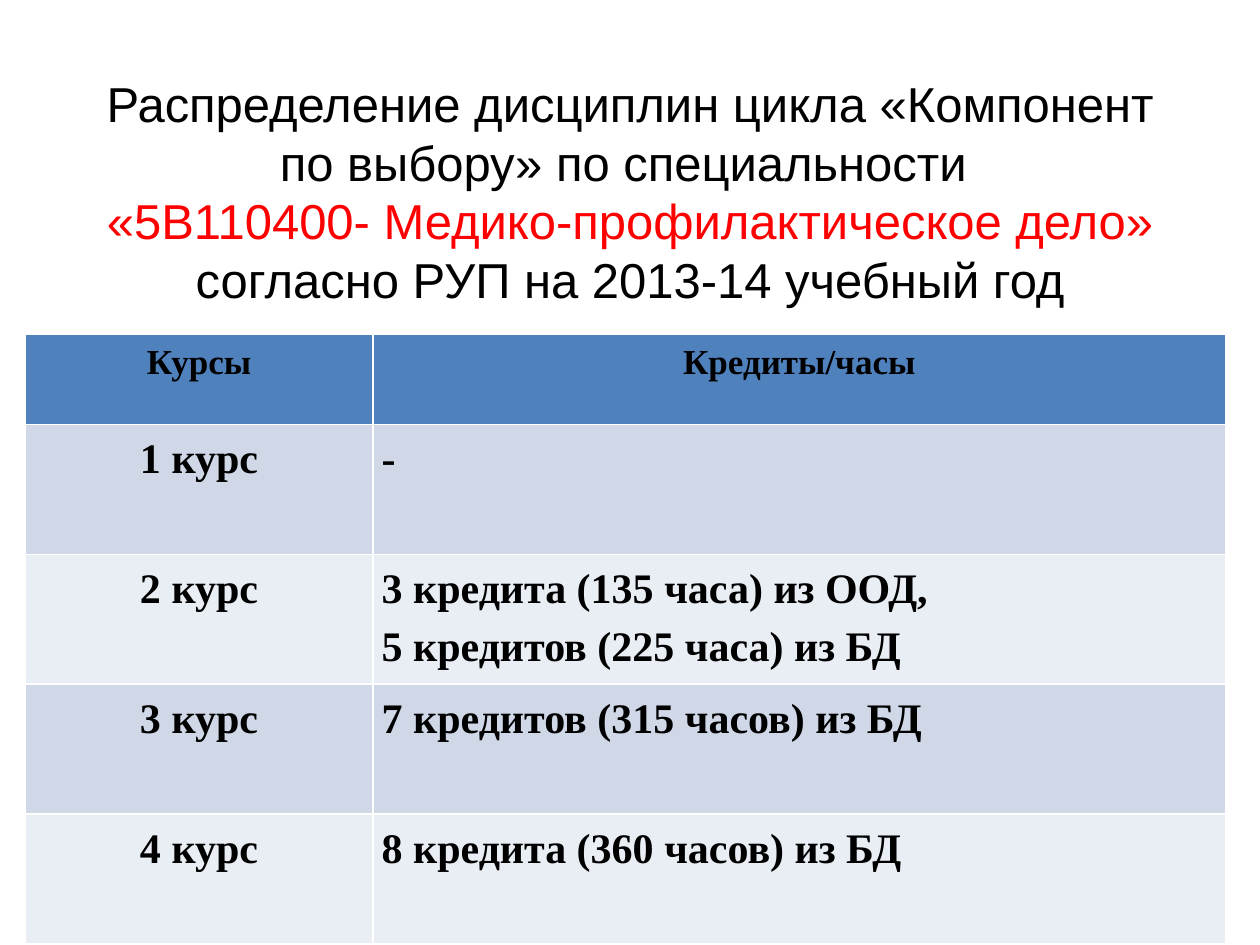
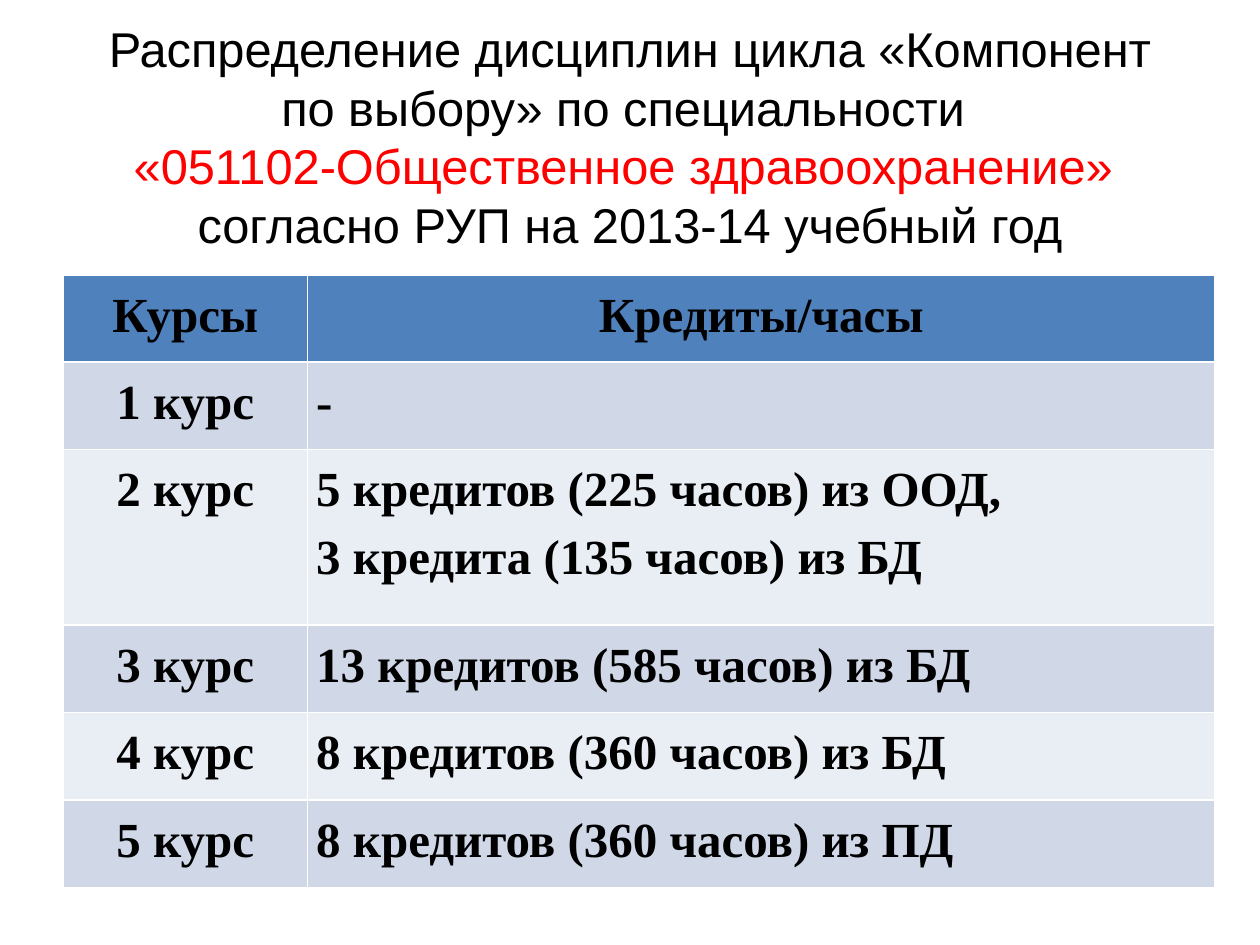
from pptx import Presentation
from pptx.dml.color import RGBColor
from pptx.enum.text import MSO_ANCHOR, PP_ALIGN
from pptx.util import Pt

BLACK = RGBColor(0x00, 0x00, 0x00)
RED = RGBColor(0xFF, 0x00, 0x00)
HEADER_FILL = RGBColor(0x4F, 0x81, 0xBD)
BAND_FILLS = (RGBColor(0xD0, 0xD8, 0xE8), RGBColor(0xE9, 0xED, 0xF4))
TITLE_FONT = "Arial"
TABLE_FONT = "Times New Roman"

TITLE_START = "Распределение дисциплин цикла «Компонент по выбору» по специальности "
TITLE_END = "согласно РУП на 2013-14 учебный год"
HEADER = ("Курсы", ["Кредиты/часы"])

SLIDES = [
    {
        "specialty": "«5В110400- Медико-профилактическое дело» ",
        "title_size": 28, "title_height": 175, "title_bottom_inset": 3.6,
        "table_at": (14.4, 190.8), "columns": (198.7, 487.4),
        "header_height": 51.8, "row_heights": (74.2,) * 4,
        "header_size": 20, "body_size": 24,
        "courses": [
            ("1 курс", ["-"]),
            ("2 курс", ["3 кредита (135 часа) из ООД, ", "5 кредитов (225 часа) из БД"]),
            ("3 курс", ["7 кредитов (315 часов) из БД"]),
            ("4 курс", ["8 кредита (360 часов) из БД"]),
        ],
    },
    {
        "specialty": "«051102-Общественное здравоохранение»  ",
        "title_size": 27.9, "title_height": 140.4, "title_bottom_inset": 31.6,
        "table_at": (36, 157), "columns": (139.7, 518.6),
        "header_height": 50, "row_heights": (50, 100.2, 50, 50, 50),
        "header_size": 28, "body_size": 28,
        "courses": [
            ("1 курс", ["-"]),
            ("2 курс", ["5 кредитов (225 часов) из ООД, ", "3 кредита (135 часов) из БД"]),
            ("3 курс", ["13 кредитов (585 часов) из БД "]),
            ("4 курс", ["8 кредитов (360 часов) из БД"]),
            ("5 курс", ["8 кредитов (360 часов) из ПД"]),
        ],
    },
]


def set_attributes(target, **values):
    for name, value in values.items():
        setattr(target, name, value)


def add_run(paragraph, text, font, size, color, bold=False):
    run = paragraph.add_run()
    run.text = text
    set_attributes(run.font, name=font, size=Pt(size), bold=bold)
    run.font.color.rgb = color


def write_title(title, content):
    set_attributes(title, left=Pt(36), top=Pt(21.6), width=Pt(648),
                   height=Pt(content["title_height"]))
    frame = title.text_frame
    set_attributes(frame, word_wrap=True, vertical_anchor=MSO_ANCHOR.MIDDLE,
                   margin_bottom=Pt(content["title_bottom_inset"]))
    paragraph = frame.paragraphs[0]
    size = content["title_size"]
    set_attributes(paragraph, alignment=PP_ALIGN.CENTER, line_spacing=Pt(size * 1.2))
    add_run(paragraph, TITLE_START, TITLE_FONT, size, BLACK)
    paragraph.add_line_break()
    add_run(paragraph, content["specialty"], TITLE_FONT, size, RED)
    add_run(paragraph, TITLE_END, TITLE_FONT, size, BLACK)


def write_cell(cell, lines, size, alignment, fill):
    set_attributes(cell, margin_left=Pt(5), margin_right=Pt(5), margin_top=0, margin_bottom=0)
    cell.fill.solid()
    cell.fill.fore_color.rgb = fill
    frame = cell.text_frame
    for index, line in enumerate(lines):
        paragraph = frame.add_paragraph() if index else frame.paragraphs[0]
        set_attributes(paragraph, alignment=alignment, line_spacing=1.25)
        add_run(paragraph, line, TABLE_FONT, size, BLACK, bold=True)


def add_course_table(slide, content):
    rows = [HEADER] + content["courses"]
    heights = (content["header_height"],) + content["row_heights"]
    left, top = content["table_at"]
    table = slide.shapes.add_table(len(rows), 2, Pt(left), Pt(top),
                                   Pt(sum(content["columns"])), Pt(sum(heights))).table
    for column, width in zip(table.columns, content["columns"]):
        column.width = Pt(width)
    for index, (course, credits) in enumerate(rows):
        table.rows[index].height = Pt(heights[index])
        is_header = index == 0
        size = content["header_size" if is_header else "body_size"]
        fill = HEADER_FILL if is_header else BAND_FILLS[(index - 1) % 2]
        credit_alignment = PP_ALIGN.CENTER if is_header else PP_ALIGN.JUSTIFY
        write_cell(table.cell(index, 0), [course], size, PP_ALIGN.CENTER, fill)
        write_cell(table.cell(index, 1), credits, size, credit_alignment, fill)


presentation = Presentation()
set_attributes(presentation, slide_width=Pt(720), slide_height=Pt(540))
for content in SLIDES:
    slide = presentation.slides.add_slide(presentation.slide_layouts[5])
    write_title(slide.shapes.title, content)
    add_course_table(slide, content)
presentation.save("out.pptx")
